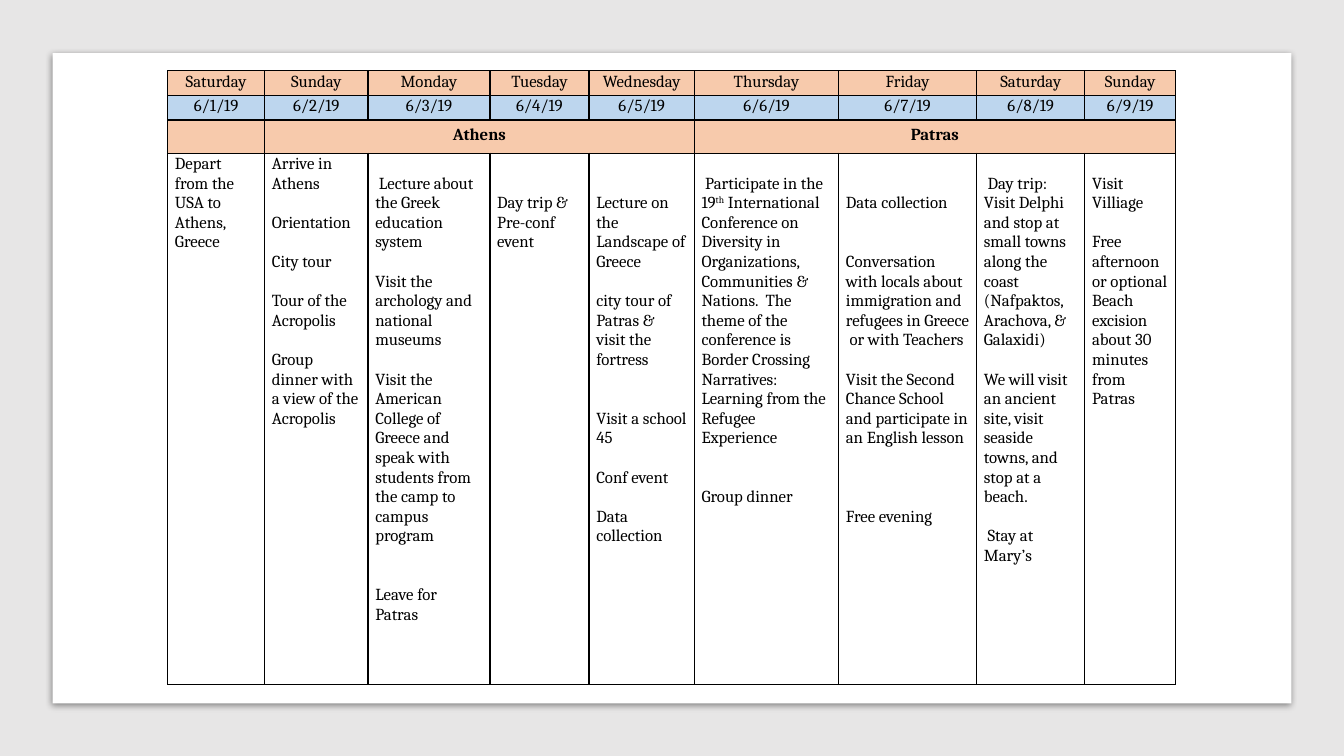
from lxml.etree import SubElement
from pptx import Presentation
from pptx.dml.color import RGBColor
from pptx.enum.shapes import MSO_SHAPE
from pptx.enum.text import PP_ALIGN
from pptx.oxml.ns import qn
from pptx.util import Pt

BLACK = RGBColor(0, 0, 0)
WHITE = RGBColor(255, 255, 255)
GREY = RGBColor(0xE7, 0xE6, 0xE6)
PEACH = RGBColor(0xF7, 0xCA, 0xAC)
BLUE = RGBColor(0xBD, 0xD6, 0xEE)
LINE = 14

days = ["Saturday", "Sunday", "Monday", "Tuesday", "Wednesday",
        "Thursday", "Friday", "Saturday", "Sunday"]
dates = [f"6/{day}/19" for day in range(1, 10)]
cities = {1: "Athens", 5: "Patras"}
plans = [
    [(0, "Depart from the USA to Athens, Greece")],
    [(0, "Arrive in Athens"),
     (1, "Orientation"),
     (1, "City tour"),
     (1, "Tour of the Acropolis"),
     (1, "Group dinner with a view of the Acropolis")],
    [(1, " Lecture about the Greek education system"),
     (1, "Visit the archology and national museums"),
     (1, "Visit the American College of Greece and speak with students "
         "from the camp to campus program"),
     (2, "Leave for Patras")],
    [(2, "Day trip & Pre-conf event")],
    [(2, "Lecture on the Landscape of Greece"),
     (1, "city tour of Patras & visit the fortress"),
     (2, "Visit a school 45"),
     (1, "Conf event"),
     (1, "Data collection")],
    [(1, " Participate in the 19^th^ International Conference on Diversity "
         "in Organizations, Communities & Nations.  The theme of the "
         "conference is Border Crossing Narratives: Learning from the "
         "Refugee Experience"),
     (2, "Group dinner")],
    [(2, "Data collection"),
     (2, "Conversation with locals about immigration and refugees in "
         "Greece  or with Teachers"),
     (1, "Visit the Second Chance School and participate in an English lesson"),
     (3, "Free evening")],
    [(1, " Day trip:  Visit Delphi and stop at small towns along the coast "
         "(Nafpaktos, Arachova, &  Galaxidi)"),
     (1, "We will visit an ancient site, visit seaside towns, "
         "and stop at a beach."),
     (1, " Stay at Mary’s")],
    [(1, "Visit Villiage"),
     (1, "Free afternoon or optional Beach excision about 30 minutes "
         "from Patras")],
]


def frame(cell, fill):
    props = cell._tc.get_or_add_tcPr()
    for side in ("lnL", "lnR", "lnT", "lnB"):
        edge = SubElement(props, qn(f"a:{side}"), w=str(Pt(1)))
        paint = SubElement(edge, qn("a:solidFill"))
        SubElement(paint, qn("a:srgbClr"), val=str(BLACK))
    if fill is None:
        cell.fill.background()
    else:
        cell.fill.solid()
        cell.fill.fore_color.rgb = fill


def write(cell, items, align, bold):
    cell.margin_left = cell.margin_right = Pt(5.2)
    cell.margin_bottom = 0
    cell.margin_top = Pt(0.7 + LINE * items[0][0])
    for spot, (gap, text) in enumerate(items):
        text_frame = cell.text_frame
        para = text_frame.add_paragraph() if spot else text_frame.paragraphs[0]
        para.alignment = align
        para.line_spacing = Pt(LINE)
        if spot:
            para.space_before = Pt(LINE * gap)
        for part, words in enumerate(text.split("^")):
            run = para.add_run()
            run.text = words
            run.font.name = "Cambria"
            run.font.size = Pt(12)
            run.font.bold = bold
            run.font.color.rgb = BLACK
            if part % 2:
                run._r.get_or_add_rPr().set("baseline", "30000")


deck = Presentation()
deck.slide_width, deck.slide_height = Pt(960), Pt(540)
slide = deck.slides.add_slide(deck.slide_layouts[6])

for box, tint in (((0, 0, 960, 540), GREY), ((37.5, 38, 885, 464.5), WHITE)):
    page = slide.shapes.add_shape(MSO_SHAPE.RECTANGLE, *map(Pt, box))
    page.shadow.inherit = False
    page.fill.solid()
    page.fill.fore_color.rgb = tint
    page.line.fill.background()

glow = SubElement(page._element.spPr.find(qn("a:effectLst")), qn("a:outerShdw"),
                  blurRad=str(Pt(5)), dist=str(Pt(1.4)), dir="5400000",
                  algn="t", rotWithShape="0")
shade = SubElement(glow, qn("a:srgbClr"), val=str(BLACK))
SubElement(shade, qn("a:alpha"), val="43000")

widths = [69.2, 73.9, 87.1, 70.8, 75.2, 103.1, 98.6, 77.3, 64.8]
heights = [17.5, 17.6, 23.7, 379.6]
fills = [PEACH, BLUE, PEACH, None]
table = slide.shapes.add_table(4, 9, Pt(119.8), Pt(50.6), Pt(sum(widths)),
                               Pt(sum(heights))).table
table.first_row = table.horz_banding = False
for col, width in zip(table.columns, widths):
    col.width = Pt(width)
for row, height, fill in zip(table.rows, heights, fills):
    row.height = Pt(height)
    for cell in row.cells:
        frame(cell, fill)
        cell.margin_top = cell.margin_bottom = 0
        cell.text_frame.paragraphs[0].line_spacing = Pt(LINE)

for num, (day, date, plan) in enumerate(zip(days, dates, plans)):
    write(table.cell(0, num), [(0, day)], PP_ALIGN.CENTER, False)
    write(table.cell(1, num), [(0, date)], PP_ALIGN.CENTER, False)
    write(table.cell(3, num), plan, PP_ALIGN.LEFT, False)

for start, city in cities.items():
    head = table.cell(2, start)
    head.merge(table.cell(2, start + 3))
    write(head, [(0, city)], PP_ALIGN.CENTER, True)
    head.margin_top = head.margin_bottom = Pt(3.6)

deck.save("out.pptx")
